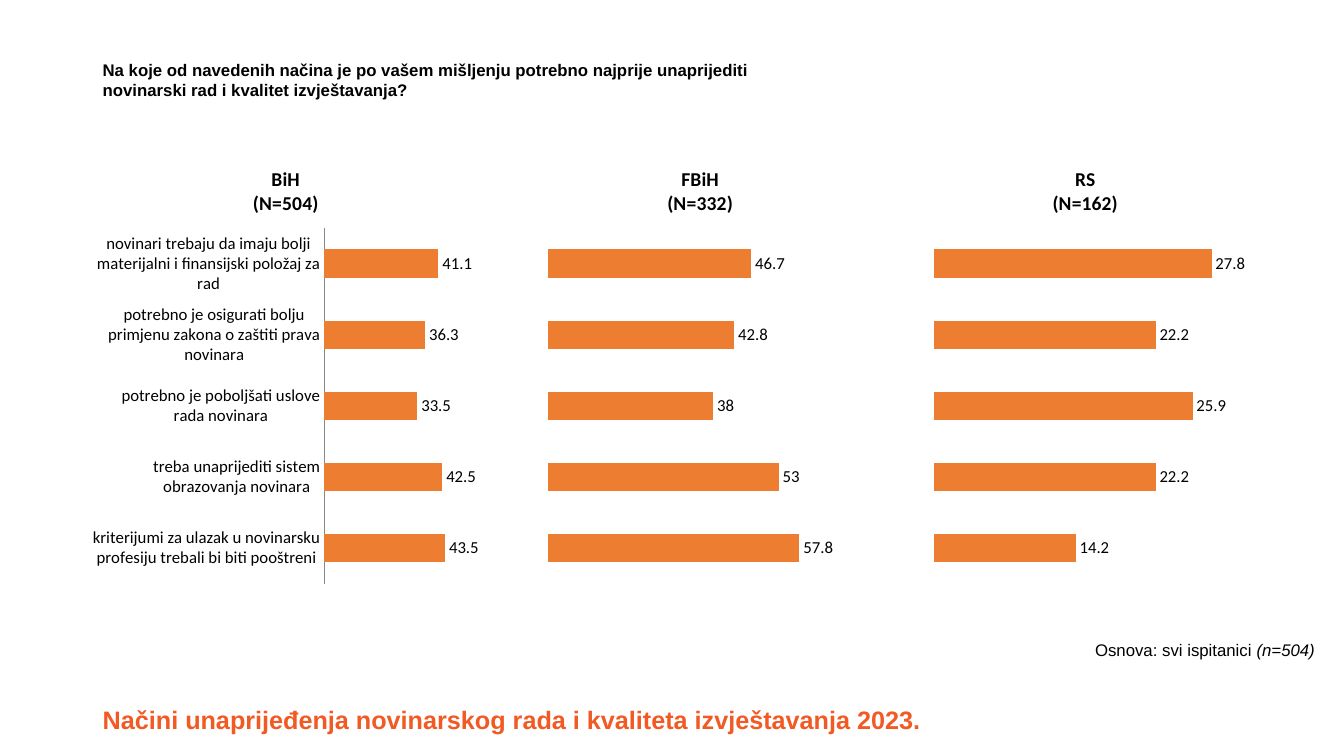
import pptx
import pptx.chart.data
import pptx.dml.color
import pptx.enum.chart
import pptx.enum.text
import pptx.oxml
import pptx.util
from pptx.util import Inches

THEME = {
    "text": "000000", "accent": "F15A23", "bar": "ED7D31", "axis": "888888",
    "text_font": "Arial", "chart_font": "Calibri",
    "heading_size": 18, "body_size": 12, "chart_title_size": 14,
}

# Each text: left, top, width, height, alignment, size, colour, bold, paragraphs of (run, italic)
TEXTS = [
    (0.92, 6.94, 9.52, 0.4, "LEFT", "heading_size", "accent", True,
     [[("Načini unaprijeđenja novinarskog rada i kvaliteta izvještavanja 2023.", False)]]),
    (0.92, 6.3, 12.22, 0.5, "RIGHT", "body_size", "text", False,
     [[("Osnova: svi ispitanici ", False), ("(n=504)", True)]]),
    (0.92, 0.54, 11.23, 0.5, "LEFT", "body_size", "text", True,
     [[("Na koje od navedenih načina je po vašem mišljenju potrebno najprije unaprijediti", False)],
      [("novinarski rad i kvalitet izvještavanja?", False)]]),
]

MEASURES = [
    "kriterijumi za ulazak u novinarsku profesiju trebali bi biti pooštreni",
    "treba unaprijediti sistem obrazovanja novinara",
    "potrebno je poboljšati uslove rada novinara",
    "potrebno je osigurati bolju primjenu zakona o zaštiti prava novinara",
    "novinari trebaju da imaju bolji materijalni i finansijski položaj za rad",
]
NUMBERS = ["1", "2", "3", "4", "5"]

CHART_TOP, CHART_HEIGHT = 1.47, 4.41
PLOT_TOP, PLOT_HEIGHT = 0.18, 0.8
REGIONS = [
    {"title": ["BiH", "(N=504)"], "left": 0.92, "width": 3.83, "categories": MEASURES,
     "values": [43.5, 42.5, 33.5, 36.3, 41.1], "maximum": 50, "plot": (0.6, 0.36),
     "overlap": -25, "show_categories": True},
    {"title": ["FBiH", "(N=332)"], "left": 5.37, "width": 3.15, "categories": NUMBERS,
     "values": [57.8, 53, 38, 42.8, 46.7], "maximum": 70, "plot": (0.02, 0.96),
     "overlap": 0, "show_categories": False},
    {"title": ["RS", "(N=162)"], "left": 9.2, "width": 3.15, "categories": NUMBERS,
     "values": [14.2, 22.2, 25.9, 22.2, 27.8], "maximum": 30, "plot": (0.02, 0.95),
     "overlap": 0, "show_categories": False},
]


def colour(name):
    return pptx.dml.color.RGBColor.from_string(THEME[name])


def apply_format(target, values):
    for name, value in values.items():
        setattr(target, name, value)


def format_font(font, family, size, colour_name="text", bold=False, italic=False):
    apply_format(font, {"name": THEME[family], "size": pptx.util.Pt(THEME[size]),
                        "bold": bold, "italic": italic})
    font.color.rgb = colour(colour_name)


def add_text(slide, left, top, width, height, alignment, size, colour_name, bold, paragraphs):
    box = slide.shapes.add_textbox(*map(Inches, (left, top, width, height)))
    frame = box.text_frame
    frame.word_wrap = True
    for index, runs in enumerate(paragraphs):
        paragraph = frame.add_paragraph() if index else frame.paragraphs[0]
        paragraph.alignment = getattr(pptx.enum.text.PP_ALIGN, alignment)
        for text, italic in runs:
            run = paragraph.add_run()
            run.text = text
            format_font(run.font, "text_font", size, colour_name, bold, italic)


def place_plot(chart, left, width):
    """Fix the inner plot area, in fractions of the chart frame."""
    namespace = "http://schemas.openxmlformats.org/drawingml/2006/chart"
    fields = {"layoutTarget": "inner", "xMode": "edge", "yMode": "edge",
              "x": left, "y": PLOT_TOP, "w": width, "h": PLOT_HEIGHT}
    items = "".join(f'<c:{name} val="{value}"/>' for name, value in fields.items())
    layout = pptx.oxml.parse_xml(
        f'<c:layout xmlns:c="{namespace}"><c:manualLayout>{items}</c:manualLayout></c:layout>')
    plot_area = chart.element.find(f".//{{{namespace}}}plotArea")
    for existing in plot_area.findall(f"{{{namespace}}}layout"):
        plot_area.remove(existing)
    plot_area.insert(0, layout)


def add_chart_title(chart, lines):
    frame = chart.chart_title.text_frame
    for index, line in enumerate(lines):
        paragraph = frame.add_paragraph() if index else frame.paragraphs[0]
        run = paragraph.add_run()
        run.text = line
        format_font(run.font, "chart_font", "chart_title_size", bold=True)
    chart.chart_title.include_in_layout = False


def add_region_chart(slide, region):
    data = pptx.chart.data.CategoryChartData()
    data.categories = region["categories"]
    data.add_series("Series 1", region["values"])
    frame = slide.shapes.add_chart(
        pptx.enum.chart.XL_CHART_TYPE.BAR_CLUSTERED, Inches(region["left"]), Inches(CHART_TOP),
        Inches(region["width"]), Inches(CHART_HEIGHT), data)
    chart = frame.chart
    chart.has_legend = False
    format_font(chart.font, "chart_font", "body_size")
    add_chart_title(chart, region["title"])
    place_plot(chart, *region["plot"])

    apply_format(chart.value_axis, {"minimum_scale": 0, "maximum_scale": region["maximum"],
                                    "has_major_gridlines": False, "visible": False})
    category_axis = chart.category_axis
    apply_format(category_axis, {"major_tick_mark": pptx.enum.chart.XL_TICK_MARK.NONE,
                                 "has_major_gridlines": False,
                                 "visible": region["show_categories"]})
    if region["show_categories"]:
        format_font(category_axis.tick_labels.font, "chart_font", "body_size")
        category_axis.format.line.color.rgb = colour("axis")
        category_axis.format.line.width = pptx.util.Pt(0.75)

    plot = chart.plots[0]
    apply_format(plot, {"gap_width": 150, "overlap": region["overlap"],
                        "vary_by_categories": False, "has_data_labels": True})
    apply_format(plot.data_labels, {
        "show_value": True, "number_format": "General", "number_format_is_linked": False,
        "position": pptx.enum.chart.XL_LABEL_POSITION.OUTSIDE_END})
    format_font(plot.data_labels.font, "chart_font", "body_size")
    fill = plot.series[0].format.fill
    fill.solid()
    fill.fore_color.rgb = colour("bar")


def main():
    presentation = pptx.Presentation()
    apply_format(presentation, {"slide_width": Inches(13.33), "slide_height": Inches(7.5)})
    slide = presentation.slides.add_slide(presentation.slide_layouts[6])
    for text in TEXTS:
        add_text(slide, *text)
    for region in REGIONS:
        add_region_chart(slide, region)
    presentation.save("out.pptx")


if __name__ == "__main__":
    main()
